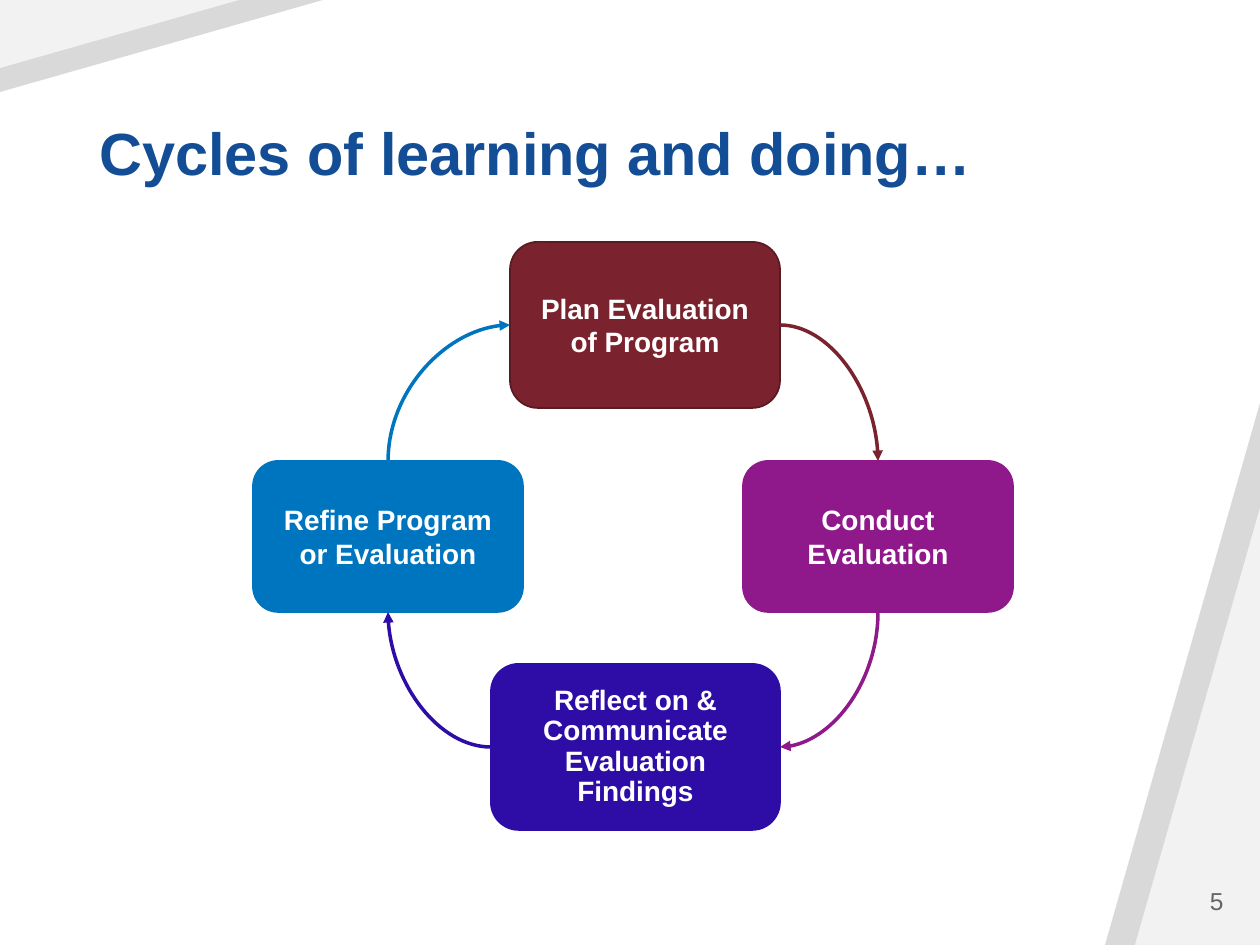
from dataclasses import dataclass

from lxml import etree
from pptx import Presentation
from pptx.dml.color import RGBColor
from pptx.enum.shapes import MSO_CONNECTOR, MSO_SHAPE
from pptx.enum.text import MSO_ANCHOR, PP_ALIGN
from pptx.oxml.ns import qn
from pptx.util import Pt

CURVE = MSO_CONNECTOR.CURVE
ROUND = MSO_SHAPE.ROUNDED_RECTANGLE
WEDGE = MSO_SHAPE.ISOSCELES_TRIANGLE
LEFT, CENTER, RIGHT = PP_ALIGN.LEFT, PP_ALIGN.CENTER, PP_ALIGN.RIGHT
MIDDLE, BOTTOM = MSO_ANCHOR.MIDDLE, MSO_ANCHOR.BOTTOM
PX = 914400 / 126


@dataclass(frozen=True)
class Theme:
    font: str = "Arial"
    title: str = "124D95"
    note: str = "646464"
    white: str = "FFFFFF"
    band: str = "D9D9D9"
    pale: str = "F2F2F2"
    plan: str = "7A232E"
    edge: str = "5A1A22"
    conduct: str = "8F198A"
    reflect: str = "2E0DA6"
    refine: str = "0075BF"
    title_size: int = 34
    box_size: int = 16
    note_size: int = 14


THEME = Theme()


def px(num):
    return round(num * PX)


def rgb(code):
    return RGBColor.from_string(code)


def place(shape, left, top, width, height):
    shape.left, shape.top = px(left), px(top)
    shape.width, shape.height = px(width), px(height)


def write(shape, text, size, color, align, anchor, bold=True, space=1.0):
    frame = shape.text_frame
    frame.text = text
    frame.word_wrap = True
    frame.vertical_anchor = anchor
    para = frame.paragraphs[0]
    para.alignment = align
    para.line_spacing = space
    font = para.runs[0].font
    font.name, font.size, font.bold = THEME.font, Pt(size), bold
    font.color.rgb = rgb(color)


def add_form(slide, kind, area, fill):
    shape = slide.shapes.add_shape(kind, *map(px, area))
    shape.shadow.inherit = False
    shape.fill.solid()
    shape.fill.fore_color.rgb = rgb(fill)
    shape.line.fill.background()
    return shape


def add_side(slide, width, height, fill):
    """Wedge in the lower right corner."""
    area = (1260 - width, 945 - height, width, height)
    add_form(slide, WEDGE, area, fill).adjustments[0] = 1


def add_top(slide, width, height, fill):
    """Wedge in the upper left corner, turned about its centre."""
    shift = (width - height) / 2
    shape = add_form(slide, WEDGE, (shift, -shift, height, width), fill)
    shape.adjustments[0] = 1
    shape.rotation = 270
    shape._element.spPr.xfrm.set("flipV", "1")


def add_box(slide, text, area, fill, edge, space=1.0):
    box = add_form(slide, ROUND, area, fill)
    box.line.color.rgb = rgb(edge)
    box.line.width = Pt(1)
    write(box, text, THEME.box_size, THEME.white, CENTER, MIDDLE, space=space)
    return box


def add_arc(slide, start, site, end, goal, color, turn, flip):
    """Quarter curve with an arrowhead, joined to both boxes."""
    arc = slide.shapes.add_connector(CURVE, 0, 0, 0, 0)
    arc.begin_connect(start, site)
    arc.end_connect(end, goal)
    left, top, width, height = arc.left, arc.top, arc.width, arc.height
    if turn == 90:
        # The stored frame is the upright one, about the same centre
        shift = (width - height) // 2
        left, top = left + shift, top - shift
        width, height = height, width
    arc.left, arc.top, arc.width, arc.height = left, top, width, height
    props = arc._element.spPr
    frame = props.xfrm
    frame.set("rot", str(turn * 60000))
    for key in ("flipH", "flipV"):
        frame.set(key, str(int(flip)))
    props.find(qn("a:prstGeom")).set("prst", "curvedConnector2")
    arc.line.color.rgb = rgb(color)
    arc.line.width = Pt(2)
    tip = etree.SubElement(props.find(qn("a:ln")), qn("a:tailEnd"))
    tip.set("type", "triangle")
    etree.SubElement(props, qn("a:effectLst"))


def add_cycle(slide):
    # Boxes, clockwise from the top
    plan = add_box(slide, "Plan Evaluation of Program",
                   (510, 242, 270, 166), THEME.plan, THEME.edge)
    conduct = add_box(slide, "Conduct Evaluation",
                      (743, 461, 270, 151), THEME.conduct, THEME.conduct)
    reflect = add_box(slide, "Reflect on & Communicate Evaluation Findings",
                      (491, 664, 289, 166), THEME.reflect, THEME.reflect, 0.9)
    refine = add_box(slide, "Refine Program or Evaluation",
                     (253, 461, 270, 151), THEME.refine, THEME.refine)
    # Arrows: start and site, end and site, colour, turn, flip
    arcs = (
        (plan, 3, conduct, 0, THEME.plan, 0, False),
        (conduct, 2, reflect, 3, THEME.conduct, 90, False),
        (reflect, 1, refine, 2, THEME.reflect, 180, False),
        (refine, 0, plan, 1, THEME.refine, 90, True),
    )
    for arc in arcs:
        add_arc(slide, *arc)


def main():
    deck = Presentation()
    deck.slide_width, deck.slide_height = px(1260), px(945)
    slide = deck.slides.add_slide(deck.slide_layouts[5])

    # Corner wedges
    add_side(slide, 155, 542, THEME.band)
    add_side(slide, 125, 437, THEME.pale)
    add_top(slide, 323, 92, THEME.band)
    add_top(slide, 239, 68, THEME.pale)

    # Title and page number
    title = slide.shapes.title
    place(title, 87, 50, 1096, 145)
    write(title, "Cycles of learning and doing…", THEME.title_size,
          THEME.title, LEFT, BOTTOM, space=0.9)
    page = slide.shapes.add_textbox(px(1060), px(876), px(176), px(50))
    write(page, "5", THEME.note_size, THEME.note, RIGHT, MIDDLE, bold=False)

    add_cycle(slide)
    deck.save("out.pptx")


if __name__ == "__main__":
    main()
